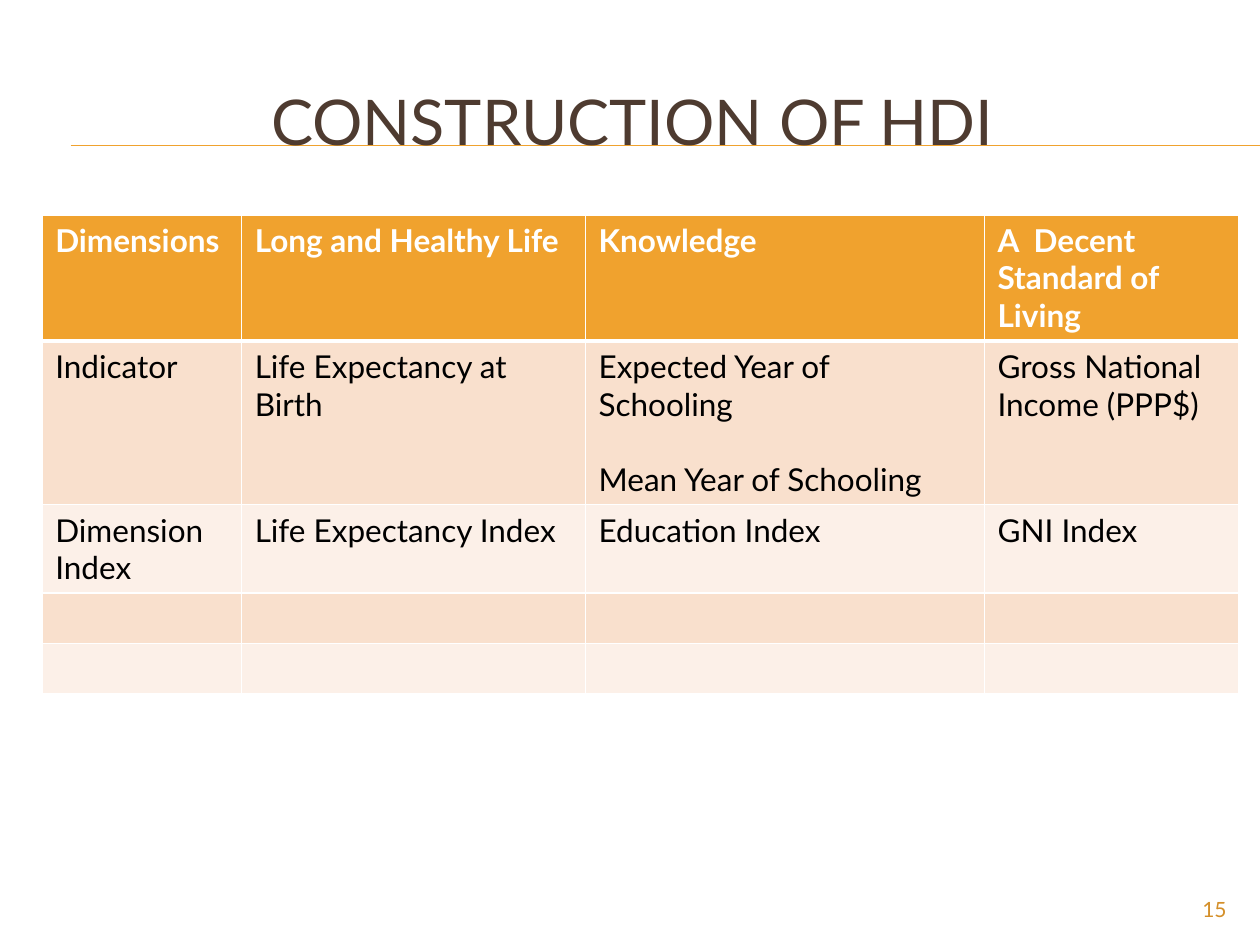
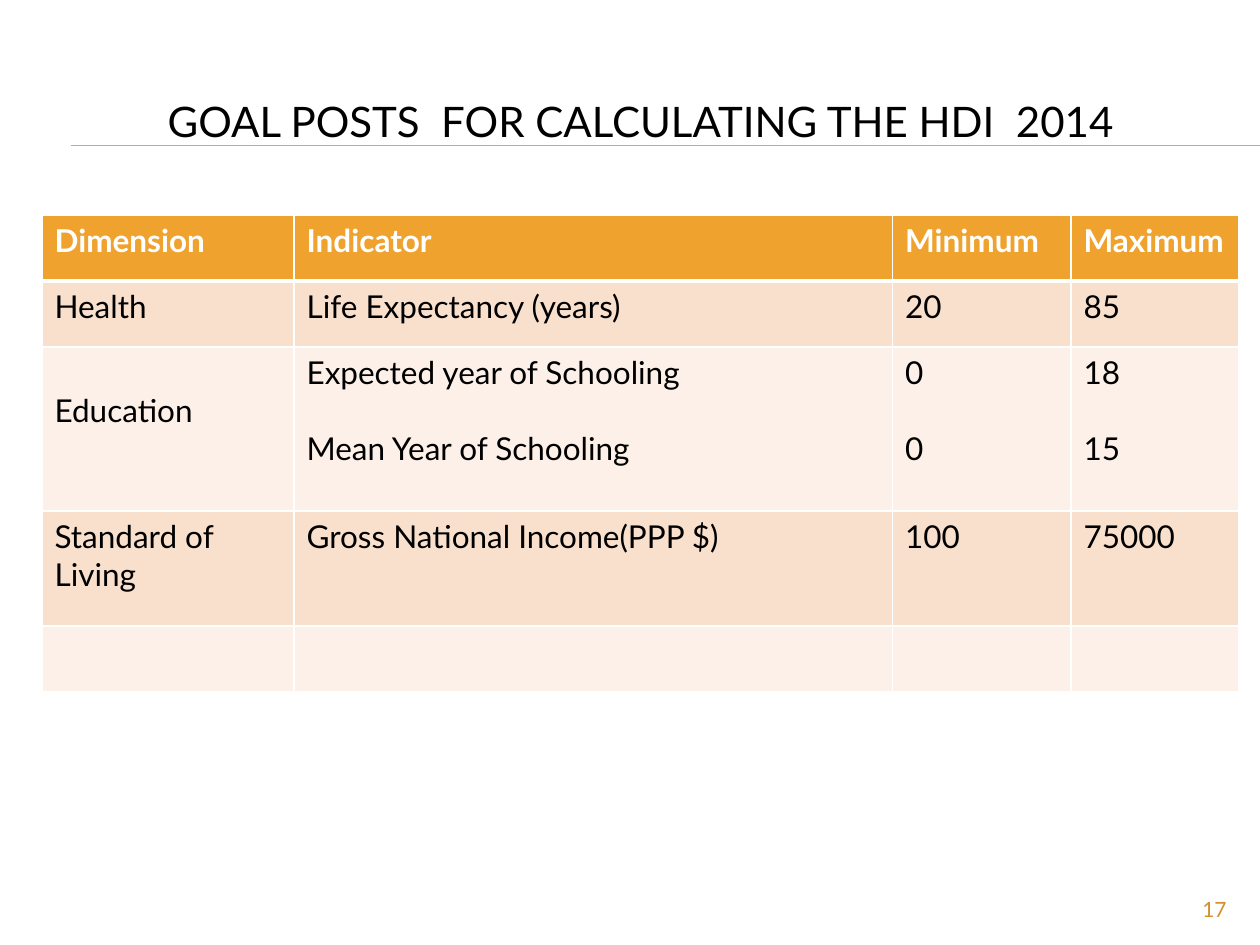
from dataclasses import dataclass
from lxml.etree import SubElement
from pptx import Presentation
from pptx.dml.color import RGBColor
from pptx.enum.shapes import MSO_CONNECTOR
from pptx.enum.text import MSO_ANCHOR, PP_ALIGN
from pptx.oxml import parse_xml
from pptx.oxml.ns import nsdecls, qn
from pptx.util import Pt


@dataclass(frozen=True)
class Theme:
    font: str = "Lato"
    gold: str = "F0A22E"
    brown: str = "4E3B30"
    black: str = "000000"
    white: str = "FFFFFF"
    bands: tuple = ("F9E0CD", "FCF0E8")
    page: str = "D48F29"
    cell: int = 18
    note: int = 12
    line: float = 21.6  # height of one line of cell text


THEME = Theme()
WIDTH, HEIGHT = 720, 540
TITLE = (24, 36, 684, 66)
GRID = (24, 122.75)
FOOT = (648, 510, 60, 19)


def style(para, size, color, bold=False, align=PP_ALIGN.LEFT):
    para.alignment = align
    font = para.font
    font.name, font.size, font.bold = THEME.font, Pt(size), bold
    font.color.rgb = RGBColor.from_string(color)


def add_rules(slide):
    """Put the double title rule on the layout, so that every slide shows it."""
    for y in (83, 83.3):
        rule = slide.shapes.add_connector(
            MSO_CONNECTOR.STRAIGHT, Pt(40.5), Pt(y), Pt(WIDTH), Pt(y))
        rule.line.color.rgb = RGBColor.from_string(THEME.gold)
        rule.line.width = Pt(0.75)
        SubElement(rule.element.spPr, qn("a:effectLst"))
        slide.slide_layout.shapes.element.append(rule.element)


def add_title(slide, box, text, size, color):
    title = slide.shapes.title
    title.left, title.top, title.width, title.height = map(Pt, box)
    frame = title.text_frame
    frame.text = text
    frame.vertical_anchor = MSO_ANCHOR.MIDDLE
    style(frame.paragraphs[0], size, color, align=PP_ALIGN.CENTER)


def add_page(slide, box, number):
    frame = slide.shapes.add_textbox(*map(Pt, box)).text_frame
    frame.word_wrap = True
    frame.vertical_anchor = MSO_ANCHOR.MIDDLE
    frame.text = str(number)
    style(frame.paragraphs[0], THEME.note, THEME.page, align=PP_ALIGN.RIGHT)


def add_edges(cell, top, base):
    widths = {"lnL": 1, "lnR": 1, "lnT": top, "lnB": base}
    props = cell._tc.get_or_add_tcPr()
    for spot, (tag, width) in enumerate(widths.items()):
        props.insert(spot, parse_xml(
            f'<a:{tag} {nsdecls("a")} w="{Pt(width)}"><a:solidFill>'
            f'<a:srgbClr val="{THEME.white}"/></a:solidFill></a:{tag}>'))


def fill_cell(cell, text, row, pad):
    head = row == 0
    cell.margin_left = cell.margin_right = Pt(pad)
    cell.margin_top = cell.margin_bottom = Pt(3.6)
    cell.fill.solid()
    cell.fill.fore_color.rgb = RGBColor.from_string(
        THEME.gold if head else THEME.bands[(row - 1) % 2])
    add_edges(cell, 3 if row == 1 else 1, 3 if head else 1)
    cell.text = text
    for index, para in enumerate(cell.text_frame.paragraphs):
        style(para, THEME.cell, THEME.white if head else THEME.black, head)
        if index:
            para.space_before = Pt(THEME.line)


def add_grid(slide, spot, cols, rows, data, pad):
    """Draw data as a table; rows beyond the data stay empty."""
    frame = slide.shapes.add_table(
        len(rows), len(cols), *map(Pt, (*spot, sum(cols), sum(rows))))
    table = frame.table
    table.horz_banding = False
    for col, width in zip(table.columns, cols):
        col.width = Pt(width)
    for r, height in enumerate(rows):
        table.rows[r].height = Pt(height)
        for c in range(len(cols)):
            text = data[r][c] if r < len(data) else ""
            fill_cell(table.cell(r, c), text, r, pad)
    return table


def add_build(slide):
    add_title(slide, TITLE, "CONSTRUCTION OF HDI ", 36, THEME.brown)
    data = [
        ("Dimensions", "Long and Healthy Life", "Knowledge",
         "A  Decent Standard of Living"),
        ("Indicator", "Life Expectancy at Birth",
         "Expected Year of Schooling\nMean Year of Schooling",
         "Gross National Income (PPP$)"),
        ("Dimension Index", "Life Expectancy Index", "Education Index",
         "GNI Index"),
    ]
    rows = [THEME.line * lines + 7.2 for lines in (3, 4, 2, 1, 1)]
    add_grid(slide, GRID, (114, 196.5, 228, 145.5), rows, data, 7.6)
    add_page(slide, FOOT, 15)


def add_goals(slide):
    add_title(slide, TITLE, "GOAL POSTS  FOR CALCULATING THE HDI  2014", 24,
              THEME.black)
    data = [
        ("Dimension", "Indicator", "Minimum", "Maximum"),
        ("Health", "Life Expectancy (years)", "20", "85"),
        ("Education", "Expected year of Schooling\nMean Year of Schooling",
         "0\n0", "18\n15"),
        ("Standard of Living", "Gross National Income(PPP $)", "100",
         "75000"),
    ]
    rows = (37.8, 37.8, 93.8, 65.6, 37.8)
    table = add_grid(slide, GRID, (144, 342, 102, 96), rows, data, 7.2)
    table.cell(2, 0).margin_top = Pt(3.6 + THEME.line)
    add_page(slide, FOOT, 17)


def main():
    deck = Presentation()
    deck.slide_width, deck.slide_height = Pt(WIDTH), Pt(HEIGHT)
    layout = deck.slide_layouts[5]
    first, second = (deck.slides.add_slide(layout) for _ in range(2))
    add_rules(first)
    add_build(first)
    add_goals(second)
    deck.save("out.pptx")


if __name__ == "__main__":
    main()
